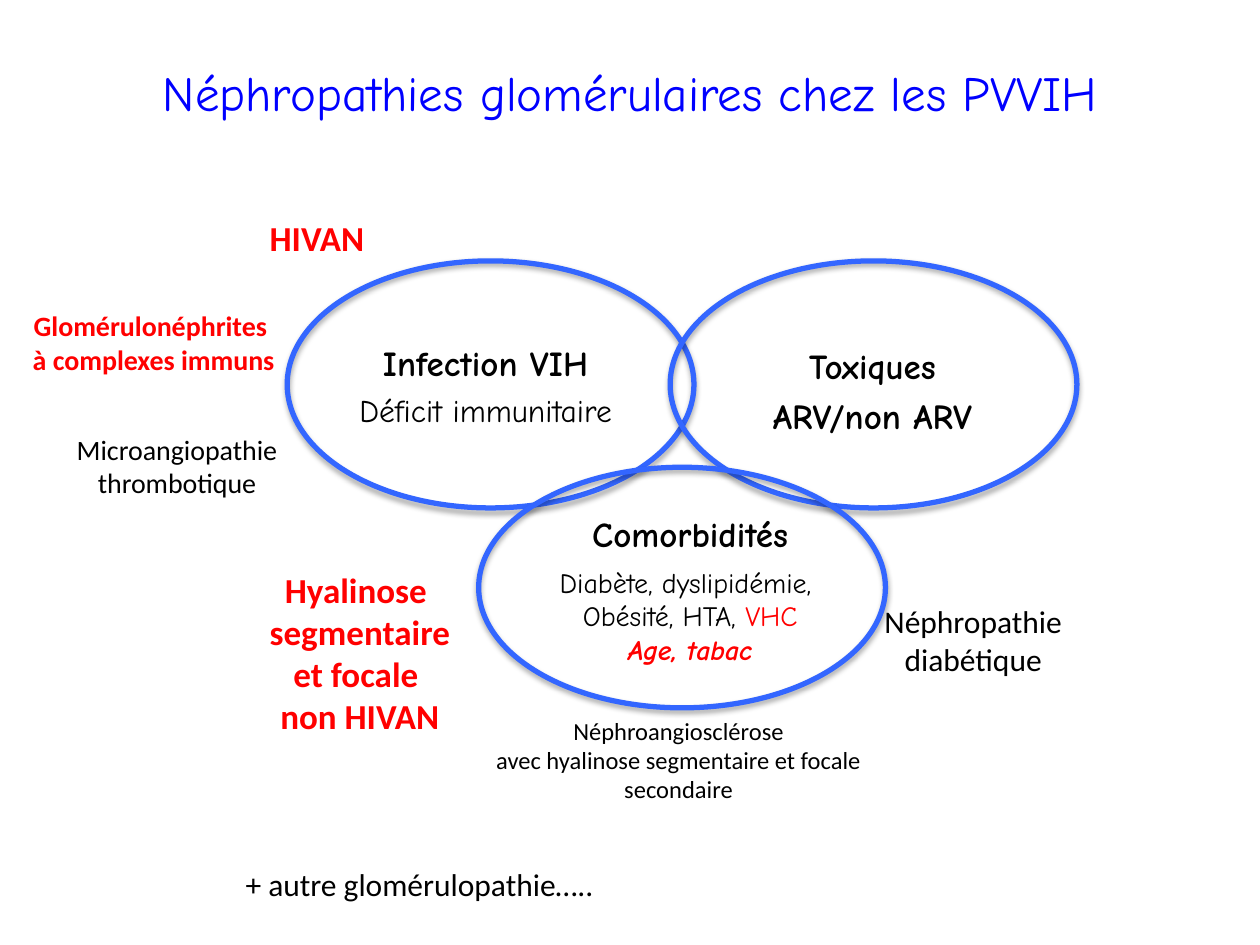
"""Build the slide on glomerular kidney disease in people living with HIV."""
from dataclasses import dataclass, field
from typing import Any

from lxml.etree import SubElement
from pptx import Presentation
from pptx.dml.color import RGBColor
from pptx.enum.shapes import MSO_SHAPE
from pptx.enum.text import MSO_ANCHOR as Anchor, MSO_AUTO_SIZE as AutoSize, PP_ALIGN as Align
from pptx.oxml.ns import qn
from pptx.util import Cm, Pt

BLACK = RGBColor(0x00, 0x00, 0x00)
RED = RGBColor(0xFF, 0x00, 0x00)
TITLE_BLUE = RGBColor(0x00, 0x00, 0xFF)
RING_BLUE = RGBColor(0x33, 0x66, 0xFF)
COMIC = "Comic Neue"
CALIBRI = "Calibri"


@dataclass(frozen=True)
class Place:
    left: float
    top: float
    width: float
    height: float

    def lengths(self) -> tuple[Cm, ...]:
        return tuple(map(Cm, (self.left, self.top, self.width, self.height)))


@dataclass(frozen=True)
class Span:
    text: str
    size: int
    font: str = CALIBRI
    color: RGBColor = BLACK
    bold: bool = False
    italic: bool = False


@dataclass(frozen=True)
class Line:
    spans: list[Span]
    format: dict[str, Any] = field(default_factory=dict)


@dataclass(frozen=True)
class Label:
    place: Place
    lines: list[Line]
    align: Align = Align.CENTER


def apply(target: Any, values: dict[str, Any]) -> None:
    for name, value in values.items():
        setattr(target, name, value)


def plain(*texts: str, **style: Any) -> list[Line]:
    return [Line([Span(text, **style)]) for text in texts]


def write(frame: Any, lines: list[Line], align: Align) -> None:
    for index, line in enumerate(lines):
        para = frame.paragraphs[0] if index == 0 else frame.add_paragraph()
        apply(para, {"alignment": align, **line.format})
        for span in line.spans:
            run = para.add_run()
            run.text = span.text
            apply(run.font, {"name": span.font, "size": Pt(span.size),
                             "bold": span.bold, "italic": span.italic})
            run.font.color.rgb = span.color


def draw_title(page: Any, place: Place, span: Span) -> None:
    title = page.shapes.title
    apply(title, dict(zip(("left", "top", "width", "height"), place.lengths())))
    apply(title.text_frame, {"word_wrap": True, "vertical_anchor": Anchor.TOP,
                             "auto_size": AutoSize.NONE})
    write(title.text_frame, [Line([span])], Align.CENTER)


def draw_ring(page: Any, place: Place) -> None:
    ring = page.shapes.add_shape(MSO_SHAPE.OVAL, *place.lengths())
    ring.fill.background()
    ring.line.color.rgb = RING_BLUE
    ring.line.width = Pt(3)
    ring.shadow.inherit = False
    effects = ring.element.spPr.find(qn("a:effectLst"))
    shadow = SubElement(effects, qn("a:outerShdw"), blurRad=str(Pt(3.1)),
                        dist=str(Pt(1.8)), dir="5400000", rotWithShape="0")
    color = SubElement(shadow, qn("a:srgbClr"), val=str(BLACK))
    SubElement(color, qn("a:alpha"), val="35000")


def draw_label(page: Any, label: Label) -> None:
    box = page.shapes.add_textbox(*label.place.lengths())
    apply(box.text_frame, {"word_wrap": False, "auto_size": AutoSize.SHAPE_TO_FIT_TEXT})
    write(box.text_frame, label.lines, label.align)


TITLE = Span("Néphropathies glomérulaires chez les PVVIH", 28, COMIC, TITLE_BLUE)
RINGS = [Place(5.79, 5.26, 8.2, 4.98), Place(13.51, 5.26, 8.2, 4.98), Place(9.65, 9.42, 8.2, 4.85)]
LOOSE = {"line_spacing": 1.2}
LABELS = [
    Label(Place(6.63, 6.6, 6.32, 2.18), [
        Line([Span("Infection VIH", 20, COMIC, bold=True)], LOOSE),
        Line([Span("Déficit immunitaire", 18, COMIC)], LOOSE)]),
    Label(Place(14.96, 6.65, 5.26, 2.29), [
        Line([Span(text, 20, COMIC, bold=True)], LOOSE) for text in ("Toxiques", "ARV/non ARV")]),
    Label(Place(10.74, 10.21, 6.35, 3.38), [
        Line([Span("Comorbidités", 20, COMIC, bold=True)], {"space_after": Pt(6)}),
        Line([Span("Diabète, dyslipidémie, ", 16, COMIC)]),
        Line([Span("Obésité, HTA, ", 16, COMIC), Span("VHC", 16, COMIC, RED)]),
        Line([Span("Age, tabac", 16, COMIC, RED, bold=True, italic=True)])]),
    Label(Place(5.16, 11.33, 4.19, 3.68),
          plain("Hyalinose ", "segmentaire", "et focale ", "non HIVAN",
                size=20, color=RED, bold=True)),
    Label(Place(17.55, 12.01, 4.14, 1.8), plain("Néphropathie ", "diabétique", size=18)),
    Label(Place(9.68, 14.3, 8, 2.06),
          plain("Néphroangiosclérose", "avec hyalinose segmentaire et focale", "secondaire",
                size=14)),
    Label(Place(5.16, 4.24, 2.46, 1.12), plain("HIVAN", size=20, color=RED, bold=True)),
    Label(Place(0.23, 6.1, 5.61, 1.63),
          plain("Glomérulonéphrites", " à complexes immuns", size=16, color=RED, bold=True)),
    Label(Place(1.27, 8.59, 4.6, 1.63), plain("Microangiopathie", "thrombotique", size=16)),
    Label(Place(4.7, 17.32, 7.62, 1.02), plain("+ autre glomérulopathie…..", size=18), Align.LEFT),
]


def main() -> None:
    deck = Presentation()
    apply(deck, {"slide_width": Cm(25.4), "slide_height": Cm(19.05)})
    page = deck.slides.add_slide(deck.slide_layouts.get_by_name("Title Only"))
    draw_title(page, Place(1.27, 1.14, 22.86, 3.18), TITLE)
    for place in RINGS:
        draw_ring(page, place)
    for label in LABELS:
        draw_label(page, label)
    deck.save("out.pptx")


if __name__ == "__main__":
    main()
